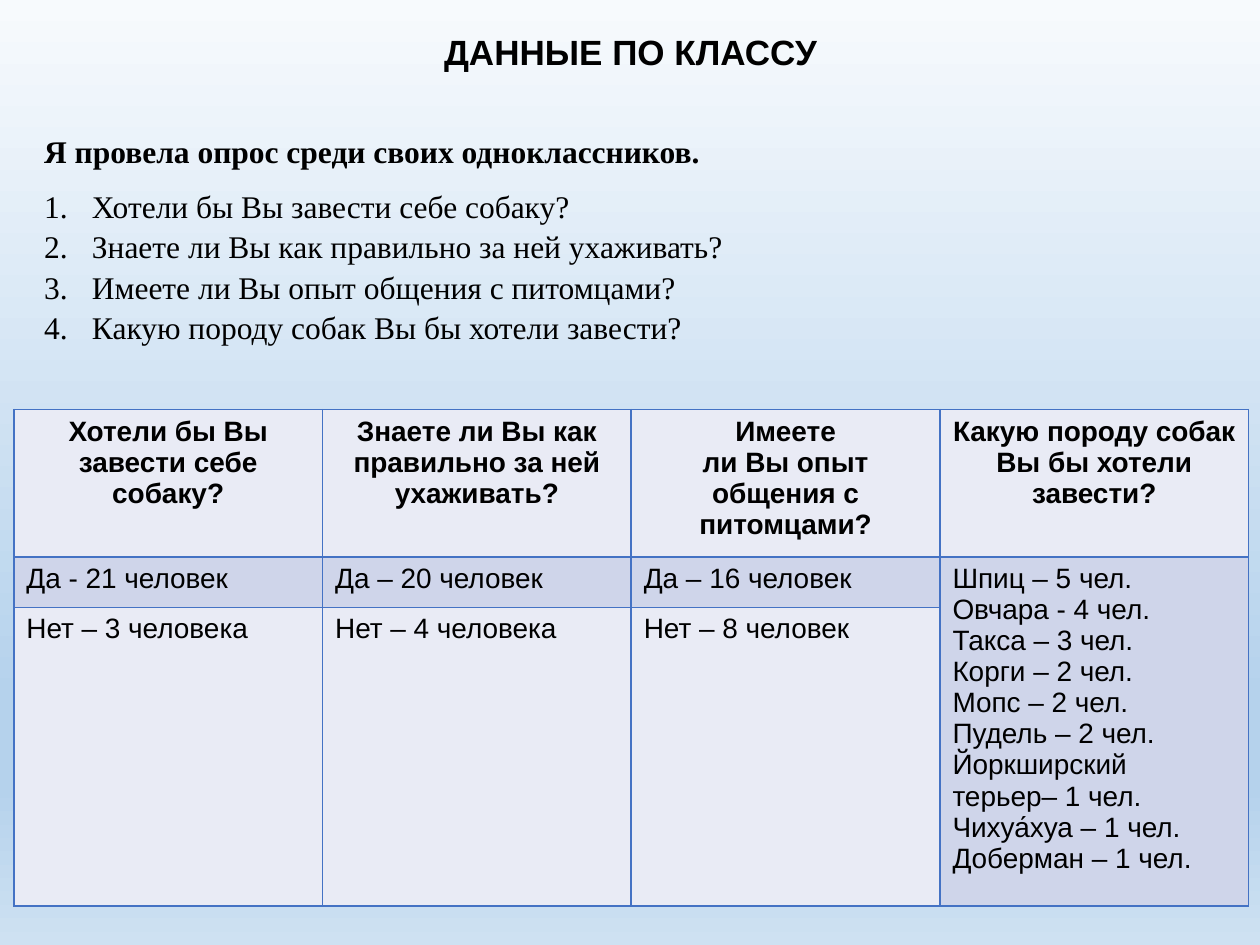
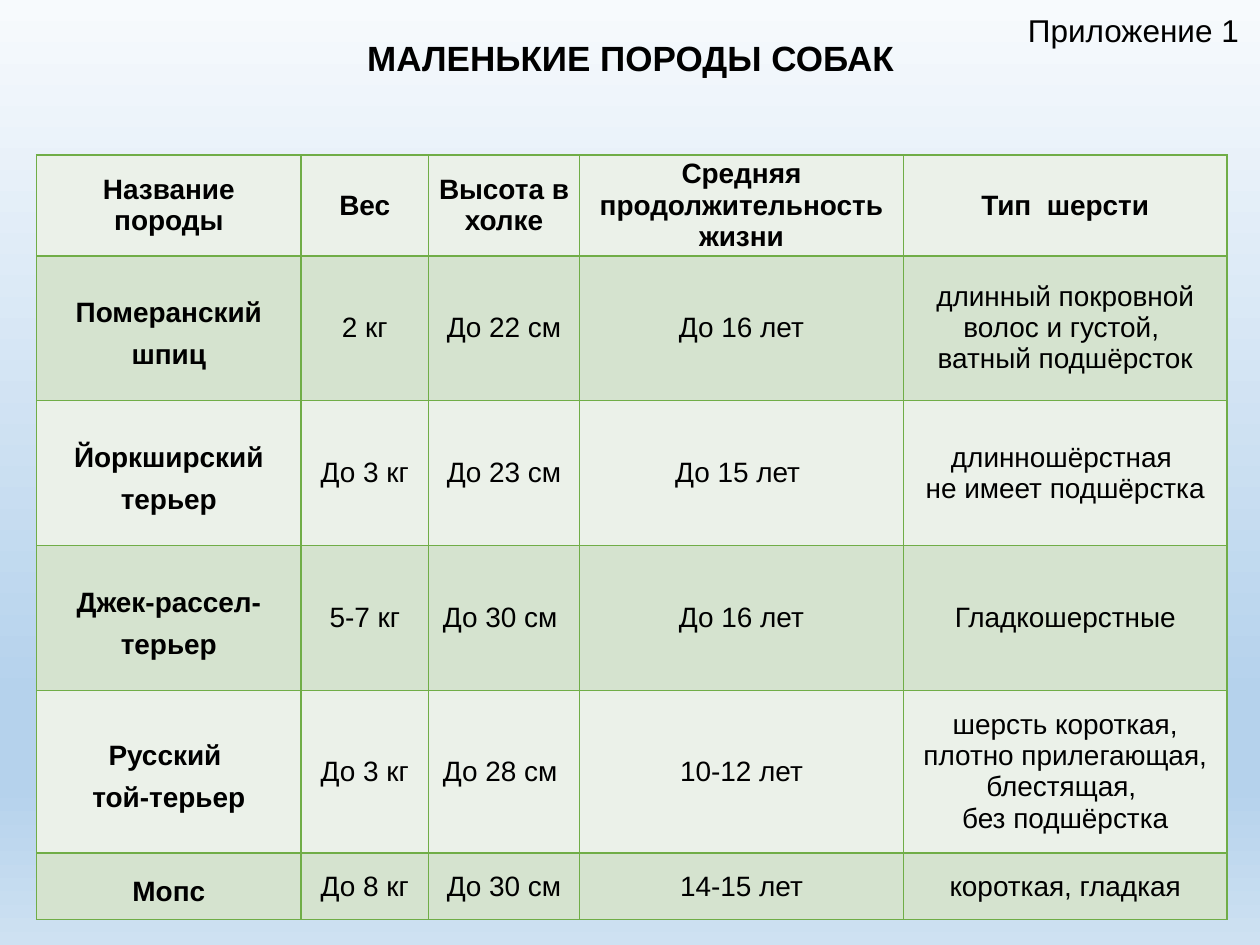
from dataclasses import dataclass

from lxml import etree
from pptx import Presentation
from pptx import util as u
from pptx.dml.color import RGBColor
from pptx.enum import text
from pptx.oxml.ns import qn


@dataclass(frozen=True)
class Theme:
    """Colours, fonts and type sizes of the deck."""
    ink: str = "000000"
    sky: tuple = ((0, "F7FAFD"), (74, "B5D2EC"), (83, "B5D2EC"), (100, "CEE1F2"))
    blue: tuple = ("4472C4", "E9EBF5", "CFD5EA")
    green: tuple = ("70AD47", "EBF1E9", "D5E3CF")
    sans: str = "Arial"
    serif: str = "Times New Roman"
    title: int = 20
    body: int = 18
    cell: int = 16


T = Theme()
CENTER = text.PP_ALIGN.CENTER

SURVEY_LEAD = "Я провела опрос среди своих одноклассников."
QUESTIONS = [
    "Хотели бы Вы завести себе собаку?",
    "Знаете ли Вы как правильно за ней ухаживать?",
    "Имеете ли Вы опыт общения с питомцами?",
    "Какую породу собак Вы бы хотели завести?",
]
SURVEY_HEADS = [
    [QUESTIONS[0]],
    [QUESTIONS[1]],
    ["Имеете", "ли Вы опыт общения с питомцами?"],
    [QUESTIONS[3]],
]
ANSWERS = [
    ["Да - 21 человек", "Да – 20 человек", "Да – 16 человек"],
    ["Нет – 3 человека", "Нет – 4 человека", "Нет – 8 человек"],
]
WANTED = [
    "Шпиц – 5 чел.", "Овчара - 4 чел.", "Такса – 3 чел.", "Корги – 2 чел.",
    "Мопс – 2 чел.", "Пудель – 2 чел.", "Йоркширский терьер– 1 чел.",
    "Чихуа́хуа – 1 чел.", "Доберман – 1 чел.",
]
BREEDS = [
    ["Название породы", "Вес", "Высота в холке",
     "Средняя продолжительность жизни", "Тип  шерсти"],
    ["Померанский шпиц", "2 кг", "До 22 см", "До 16 лет",
     "длинный покровной волос и густой, \nватный подшёрсток"],
    ["Йоркширский терьер", "До 3 кг", "До 23 см", "До 15 лет ",
     "длинношёрстная \nне имеет подшёрстка"],
    ["Джек-рассел-терьер", "5-7 кг", "До 30 см ", "До 16 лет", "Гладкошерстные"],
    ["Русский \nтой-терьер", "До 3 кг", "До 28 см ", "10-12 лет",
     "шерсть короткая, плотно прилегающая, блестящая, \nбез подшёрстка"],
    ["Мопс", "До 8 кг", "До 30 см", "14-15 лет", "короткая, гладкая"],
]


def place(sp, box):
    """Move a shape to a box of left, top, width, height in inches."""
    sp.left, sp.top, sp.width, sp.height = map(u.Inches, box)


def write(p, words, size, font=T.sans, bold=False):
    """Add words to a paragraph, with a line break at each newline."""
    for i, line in enumerate(words.split("\n")):
        if i:
            p.add_line_break()
        r = p.add_run()
        r.text = line
        r.font.size, r.font.name, r.font.bold = u.Pt(size), font, bold
        r.font.color.rgb = RGBColor.from_string(T.ink)


def paragraphs(tf, count):
    """Return a list of count paragraphs of an empty text frame."""
    return [tf.paragraphs[0]] + [tf.add_paragraph() for _ in range(count - 1)]


def set_background(master):
    """Give the master the vertical sky gradient."""
    fill = master.background.fill
    fill.gradient()
    fill.gradient_angle = 270
    stops = next(master.element.iter(qn("a:gsLst")))
    for old in list(stops):
        stops.remove(old)
    for position, colour in T.sky:
        gs = etree.SubElement(stops, qn("a:gs"), pos=str(position * 1000))
        etree.SubElement(gs, qn("a:srgbClr"), val=colour)


def add_title(s, words, top):
    """Fill the title placeholder in a strip across the slide."""
    sp = s.shapes.title
    place(sp, (0.03, top, 9.95, 0.44))
    tf = sp.text_frame
    tf.auto_size = text.MSO_AUTO_SIZE.NONE
    p = tf.paragraphs[0]
    p.alignment = CENTER
    write(p, words, T.title, bold=True)


def add_questions(s, box):
    """Fill the body placeholder with a lead line and numbered questions."""
    sp = s.placeholders[1]
    place(sp, box)
    tf = sp.text_frame
    tf.auto_size = text.MSO_AUTO_SIZE.NONE
    lines = [SURVEY_LEAD] + QUESTIONS
    for i, (p, line) in enumerate(zip(paragraphs(tf, len(lines)), lines)):
        p.line_spacing, p.space_before = 1.07, u.Pt(0)
        p.space_after = u.Pt(0 if 0 < i < len(QUESTIONS) else 8)
        pPr = p._p.get_or_add_pPr()
        indent = u.Inches(0.38 if i else 0)
        pPr.set("marL", str(indent))
        pPr.set("indent", str(-indent))
        if i:
            etree.SubElement(pPr, qn("a:buFont"), typeface="+mj-lt")
            etree.SubElement(pPr, qn("a:buAutoNum"), type="arabicPeriod")
        else:
            etree.SubElement(pPr, qn("a:buNone"))
        write(p, line, T.body, T.serif, bold=not i)


def style_cell(cell, line, fill):
    """Draw the four borders of a cell and fill it."""
    tcPr = cell._tc.get_or_add_tcPr()
    for side in ("lnL", "lnR", "lnT", "lnB"):
        ln = etree.SubElement(tcPr, qn(f"a:{side}"), w=str(u.Pt(1)))
        solid = etree.SubElement(ln, qn("a:solidFill"))
        etree.SubElement(solid, qn("a:srgbClr"), val=line)
    cell.fill.solid()
    cell.fill.fore_color.rgb = RGBColor.from_string(fill)


def add_grid(s, left, top, widths, heights, palette):
    """Add a table whose rows alternate between the two palette fills."""
    box = map(u.Inches, (left, top, sum(widths), sum(heights)))
    table = s.shapes.add_table(len(heights), len(widths), *box).table
    table.first_row = table.horz_banding = False
    for column, width in zip(table.columns, widths):
        column.width = u.Inches(width)
    line, *fills = palette
    for i, (row, height) in enumerate(zip(table.rows, heights)):
        row.height = u.Inches(height)
        for cell in row.cells:
            style_cell(cell, line, fills[i % 2])
    return table


def add_survey_table(s, left, top):
    """Add the class answers, with wanted breeds merged over two rows."""
    table = add_grid(s, left, top, [2.45] * 4, [1.17, 0.4, 2.37], T.blue)
    table.cell(1, 3).merge(table.cell(2, 3))
    rows = [SURVEY_HEADS] + [[[answer] for answer in row] for row in ANSWERS]
    rows[1].append(WANTED)
    for i, row in enumerate(rows):
        for j, lines in enumerate(row):
            tf = table.cell(i, j).text_frame
            for p, line in zip(paragraphs(tf, len(lines)), lines):
                if i == 0:
                    p.alignment = CENTER
                write(p, line, T.cell, bold=i == 0)


def add_breed_table(s, left, top):
    """Add the comparison of small breeds."""
    heights = [0.8] + [1.15] * 3 + [1.29, 0.53]
    table = add_grid(s, left, top, [2.1, 1.01, 1.2, 2.57, 2.57], heights, T.green)
    for i, row in enumerate(BREEDS):
        for j, words in enumerate(row):
            cell = table.cell(i, j)
            cell.vertical_anchor = text.MSO_ANCHOR.MIDDLE
            cell.margin_left = cell.margin_right = u.Inches(0.07)
            cell.margin_top = cell.margin_bottom = u.Inches(0.05 if i > 3 else 0)
            p = cell.text_frame.paragraphs[0]
            p.alignment = CENTER
            if i and not j:
                p.line_spacing, p.space_before = u.Pt(24), u.Pt(2)
            else:
                p.space_after = u.Pt(15)
            write(p, words, T.cell, bold=not i or not j)


def add_appendix_label(s, box):
    """Add the appendix number in the corner."""
    sp = s.shapes.add_textbox(*map(u.Inches, box))
    sp.text_frame.word_wrap = False
    write(sp.text_frame.paragraphs[0], "Приложение 1", T.body)


def survey_slide(prs):
    """Build the slide with the class survey."""
    s = prs.slides.add_slide(prs.slide_layouts[1])
    add_title(s, "ДАННЫЕ ПО КЛАССУ", 0.19)
    add_questions(s, (0.25, 0.98, 7.01, 2.2))
    add_survey_table(s, 0.11, 3.25)


def breeds_slide(prs):
    """Build the slide with the small breeds."""
    s = prs.slides.add_slide(prs.slide_layouts[5])
    add_title(s, "МАЛЕНЬКИЕ ПОРОДЫ СОБАК", 0.24)
    add_appendix_label(s, (8.06, 0.04, 1.89, 0.4))
    add_breed_table(s, 0.29, 1.23)


def main():
    """Build and save the deck."""
    prs = Presentation()
    prs.slide_width, prs.slide_height = u.Inches(10), u.Inches(7.5)
    set_background(prs.slide_master)
    survey_slide(prs)
    breeds_slide(prs)
    prs.save("out.pptx")


if __name__ == "__main__":
    main()
